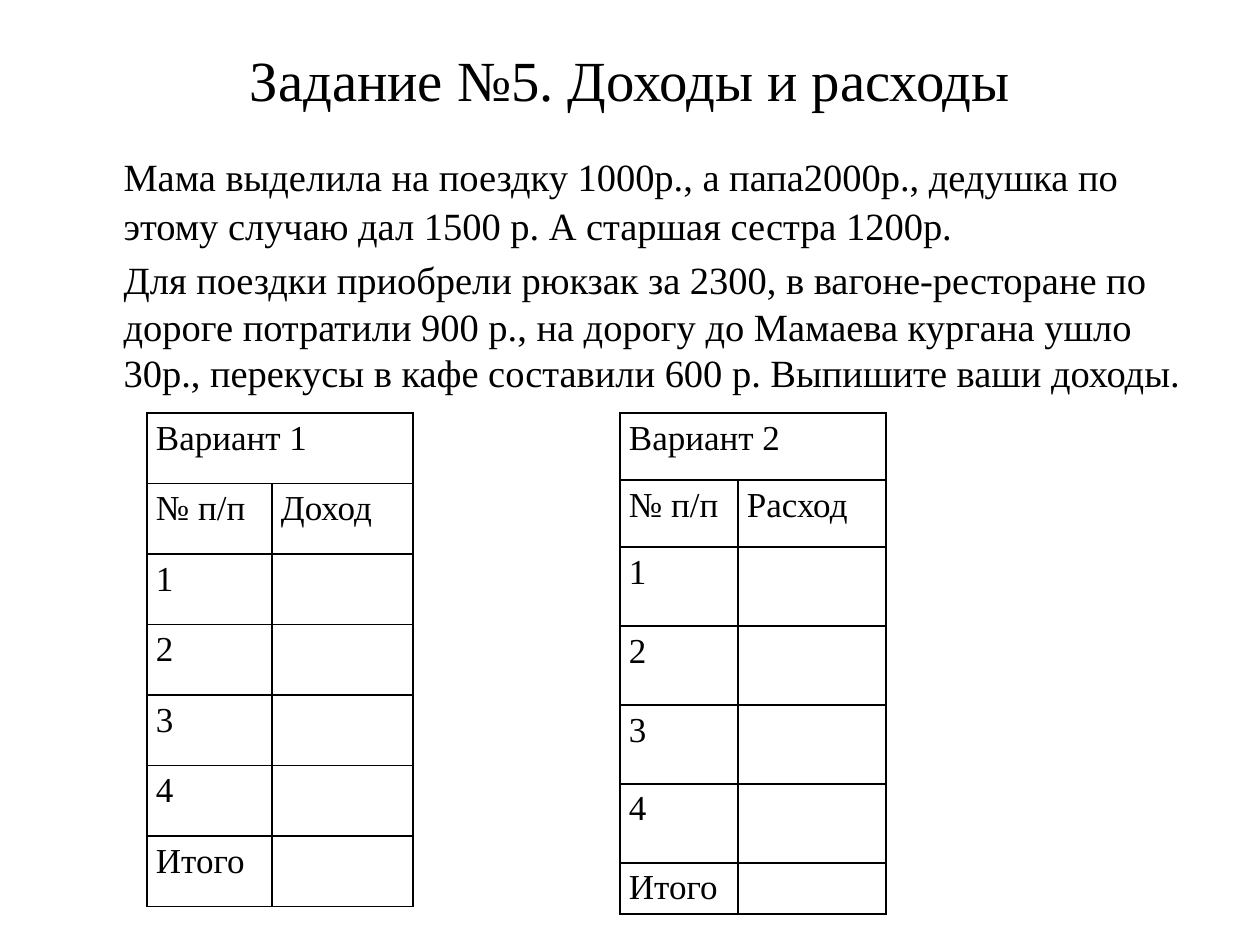
from lxml import etree
from pptx import Presentation
from pptx.dml.color import RGBColor
from pptx.enum.text import MSO_ANCHOR, MSO_AUTO_SIZE, PP_ALIGN
from pptx.oxml.ns import qn
from pptx.util import Pt

PX = 914400 / 126
COLORS = {"ink": "000000"}
SERIF, SANS = "Times New Roman", "Calibri"
CENTER = PP_ALIGN.CENTER
MIDDLE, TOP = MSO_ANCHOR.MIDDLE, MSO_ANCHOR.TOP
NO_FIT = MSO_AUTO_SIZE.NONE


def px(n):
    return round(n * PX)


def add_run(para, text, size, font=SERIF):
    run = para.add_run()
    run.text = text
    run.font.size = Pt(size)
    run.font.name = font
    run.font.color.rgb = RGBColor.from_string(COLORS["ink"])


def set_box(shape, box, anchor):
    shape.left, shape.top, shape.width, shape.height = map(px, box)
    frame = shape.text_frame
    frame.word_wrap = True
    frame.auto_size = NO_FIT
    frame.vertical_anchor = anchor
    return frame


def add_title(slide, box, text):
    para = set_box(slide.shapes.title, box, MIDDLE).paragraphs[0]
    para.alignment = CENTER
    add_run(para, text, 32.4)


def add_body(slide, box, paras):
    frame = set_box(slide.placeholders[1], box, TOP)
    for i, runs in enumerate(paras):
        para = frame.add_paragraph() if i else frame.paragraphs[0]
        props = para._p.get_or_add_pPr()
        props.set("marL", str(px(48)))
        props.set("indent", str(px(-48)))
        etree.SubElement(props, qn("a:buNone"))
        for run in runs:
            add_run(para, *run)


def add_lines(cell):
    props = cell._tc.get_or_add_tcPr()
    for side in ("L", "R", "T", "B"):
        line = etree.SubElement(props, qn("a:ln" + side), w=str(Pt(1)))
        fill = etree.SubElement(line, qn("a:solidFill"))
        etree.SubElement(fill, qn("a:srgbClr"), val=COLORS["ink"])


def add_grid(slide, box, cols, rows, head, kind):
    texts = [(head, ""), ("№ п/п", kind)]
    texts += [(name, "") for name in ("1", "2", "3", "4", "Итого")]
    table = slide.shapes.add_table(len(rows), len(cols), *map(px, box)).table
    table.first_row = table.horz_banding = False
    for col, width in zip(table.columns, cols):
        col.width = px(width)
    for row, height, line in zip(table.rows, rows, texts):
        row.height = px(height)
        for cell, text in zip(row.cells, line):
            add_lines(cell)
            cell.fill.background()
            cell.margin_left = cell.margin_right = px(9)
            cell.margin_top = cell.margin_bottom = 0
            if text:
                para = cell.text_frame.paragraphs[0]
                para.line_spacing = 1.15
                add_run(para, text, 20)
    table.cell(0, 0).merge(table.cell(0, 1))


def main():
    deck = Presentation()
    deck.slide_width, deck.slide_height = px(1260), px(945)
    slide = deck.slides.add_slide(deck.slide_layouts[1])
    add_title(slide, (63, 38, 1134, 81), "Задание №5. Доходы и расходы")
    add_body(slide, (63, 129, 1134, 286), [
        [("\t", 32, SANS),
         ("Мама выделила на поездку 1000р., а папа2000р., дедушка по этому "
          "случаю дал 1500 р. А старшая сестра 1200р.", 22)],
        [("\tДля поездки приобрели рюкзак за 2300, в вагоне-ресторане по "
          "дороге потратили 900 р., на дорогу до Мамаева кургана ушло 30р., "
          "перекусы в кафе составили 600 р. Выпишите ваши доходы.", 22)],
    ])
    add_grid(slide, (147, 413, 266, 494), (125, 141), [70.5] * 7,
             "Вариант 1", "Доход")
    add_grid(slide, (620, 413, 266, 502), (118, 148),
             [67] * 2 + [79] * 4 + [51], "Вариант 2", "Расход")
    deck.save("out.pptx")


if __name__ == "__main__":
    main()
